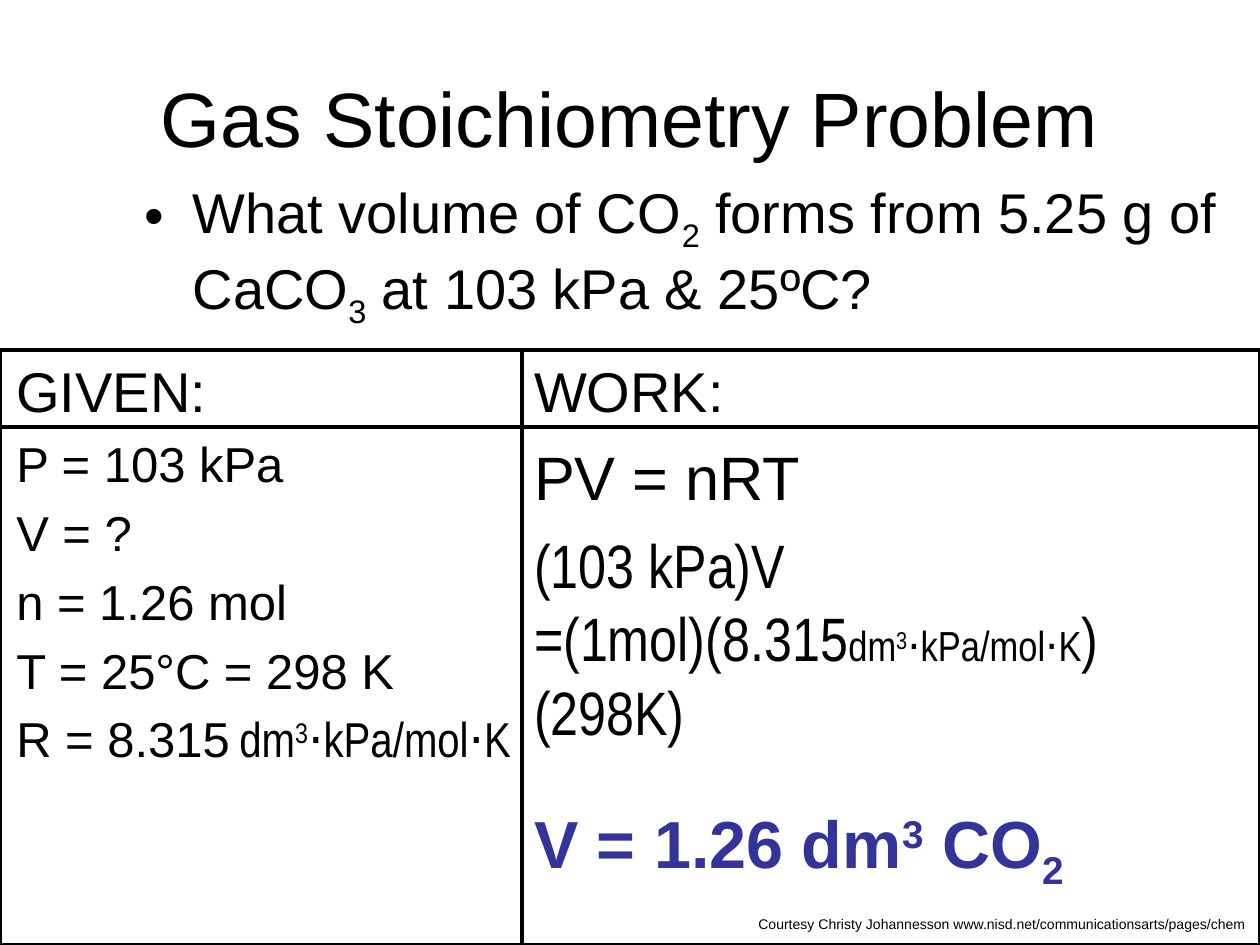
from dataclasses import dataclass

from lxml import etree
from pptx import Presentation
from pptx.dml.color import RGBColor
from pptx.enum.shapes import MSO_CONNECTOR, MSO_SHAPE
from pptx.enum.text import MSO_ANCHOR, PP_ALIGN
from pptx.oxml.ns import qn
from pptx.util import Inches, Pt

STRAIGHT = MSO_CONNECTOR.STRAIGHT
RECTANGLE = MSO_SHAPE.RECTANGLE
MIDDLE, TOP = MSO_ANCHOR.MIDDLE, MSO_ANCHOR.TOP
CENTER, LEFT = PP_ALIGN.CENTER, PP_ALIGN.LEFT
TITLE_ONLY = 5
SUBSCRIPT, SUPERSCRIPT = -25, 30


@dataclass(frozen=True)
class Theme:
    """Colours, fonts and type sizes of the slide."""
    ink: RGBColor = RGBColor(0, 0, 0)
    answer: RGBColor = RGBColor(0x33, 0x33, 0x99)
    font: str = "Arial"
    narrow: str = "Arial Narrow"
    title: int = 44
    heading: int = 32
    given: int = 28
    work: int = 35
    result: int = 38
    unit: int = 24
    credit: int = 8
    rule: float = 2.25


THEME = Theme()


@dataclass(frozen=True)
class Box:
    """A rectangle in inches."""
    left: float
    top: float
    width: float
    height: float

    def emu(self):
        """Return the four lengths as slide units."""
        return [Inches(value) for value in (self.left, self.top, self.width, self.height)]


PAGE = Box(0, 0, 10, 7.5)
TABLE_TOP = 2.78
SPLIT_X = 4.14
HEADER_Y = 3.39


def add_run(paragraph, text, size, font=THEME.font, color=THEME.ink, bold=False, baseline=0):
    """Append one formatted run to a paragraph."""
    run = paragraph.add_run()
    run.text = text
    run.font.size = Pt(size)
    run.font.name = font
    run.font.bold = bold
    run.font.color.rgb = color
    if baseline:
        run._r.get_or_add_rPr().set("baseline", str(baseline * 1000))


def add_cubic_decimetre_units(paragraph, size):
    """Append the units of the gas constant in the narrow font."""
    add_run(paragraph, "dm", size, THEME.narrow)
    add_run(paragraph, "3", size, THEME.narrow, baseline=SUPERSCRIPT)
    add_run(paragraph, "⋅kPa/mol⋅K", size, THEME.narrow)


def add_text_frame(slide, box, inset=0.1, wrap=True):
    """Place a text box and return its frame."""
    frame = slide.shapes.add_textbox(*box.emu()).text_frame
    frame.word_wrap = wrap
    frame.vertical_anchor = TOP
    frame.margin_left = Inches(inset)
    return frame


def next_paragraph(frame, space_before):
    """Append a left-aligned paragraph with space above it."""
    paragraph = frame.add_paragraph()
    paragraph.alignment = LEFT
    paragraph.space_before = Pt(space_before)
    return paragraph


def fill_title(slide, box):
    """Move the title placeholder into the box and write the title."""
    title = slide.shapes.title
    title.left, title.top, title.width, title.height = box.emu()
    title.text_frame.vertical_anchor = MIDDLE
    paragraph = title.text_frame.paragraphs[0]
    paragraph.alignment = CENTER
    add_run(paragraph, "Gas Stoichiometry Problem", THEME.title)


def add_question(slide, box):
    """Write the bulleted question."""
    paragraph = add_text_frame(slide, box).paragraphs[0]
    properties = paragraph._p.get_or_add_pPr()
    properties.set("marL", str(Inches(0.38)))
    properties.set("indent", str(-Inches(0.38)))
    etree.SubElement(properties, qn("a:buFont")).set("typeface", THEME.font)
    etree.SubElement(properties, qn("a:buChar")).set("char", "•")
    for text, baseline in (
        ("What volume of CO", 0), ("2", SUBSCRIPT),
        (" forms from 5.25 g of CaCO", 0), ("3", SUBSCRIPT),
        (" at 103 kPa & 25ºC?", 0),
    ):
        add_run(paragraph, text, THEME.heading, baseline=baseline)


def add_rule(slide, start, end):
    """Draw one straight rule of the frame."""
    ends = [Inches(value) for value in (*start, *end)]
    rule = slide.shapes.add_connector(STRAIGHT, *ends)
    rule.line.color.rgb = THEME.ink
    rule.line.width = Pt(THEME.rule)
    etree.SubElement(rule._element.spPr, qn("a:effectLst"))


def add_frame(slide, box):
    """Draw the outline with its column and header rules."""
    outline = slide.shapes.add_shape(RECTANGLE, *box.emu())
    outline.shadow.inherit = False
    outline.fill.background()
    outline.line.color.rgb = THEME.ink
    outline.line.width = Pt(THEME.rule)
    add_rule(slide, (SPLIT_X, box.top), (SPLIT_X, box.top + box.height))
    add_rule(slide, (box.left, HEADER_Y), (box.left + box.width, HEADER_Y))


def add_given(slide, box):
    """List the known quantities."""
    frame = add_text_frame(slide, box, inset=0.13)
    add_run(frame.paragraphs[0], "GIVEN:", THEME.heading)
    for text in ("P = 103 kPa", "V = ?", "n = 1.26 mol", "T = 25°C = 298 K", "R = 8.315"):
        paragraph = next_paragraph(frame, 5.7)
        add_run(paragraph, text, THEME.given)
    add_run(paragraph, " ", THEME.unit, THEME.narrow)
    add_cubic_decimetre_units(paragraph, THEME.given)


def add_work(slide, box):
    """Write the solution and its answer."""
    frame = add_text_frame(slide, box)
    add_run(frame.paragraphs[0], "WORK:", THEME.heading)
    add_run(next_paragraph(frame, 9), "PV = nRT", THEME.work)

    substitution = next_paragraph(frame, 8)
    add_run(substitution, "(103 kPa)V", THEME.work, THEME.narrow)
    substitution.add_line_break()
    add_run(substitution, "=(1mol)(8.315", THEME.work, THEME.narrow)
    add_cubic_decimetre_units(substitution, THEME.unit)
    add_run(substitution, ")(298K)", THEME.work, THEME.narrow)

    answer = next_paragraph(frame, 31)
    for text, baseline in (
        ("V = 1.26 dm", 0), ("3", SUPERSCRIPT), (" CO", 0), ("2", SUBSCRIPT),
    ):
        add_run(answer, text, THEME.result, color=THEME.answer, bold=True, baseline=baseline)


def add_credit(slide, box):
    """Write the source line."""
    paragraph = add_text_frame(slide, box, wrap=False).paragraphs[0]
    add_run(paragraph,
            "Courtesy Christy Johannesson www.nisd.net/communicationsarts/pages/chem",
            THEME.credit)


def main():
    """Build and save the slide."""
    presentation = Presentation()
    presentation.slide_width = Inches(PAGE.width)
    presentation.slide_height = Inches(PAGE.height)
    slide = presentation.slides.add_slide(presentation.slide_layouts[TITLE_ONLY])
    column_height = 3.86
    add_frame(slide, Box(0, TABLE_TOP, PAGE.width, PAGE.height - TABLE_TOP))
    add_work(slide, Box(SPLIT_X, TABLE_TOP, PAGE.width - SPLIT_X, column_height))
    fill_title(slide, Box(0.5, 0.3, PAGE.width - 1, 1.25))
    add_question(slide, Box(1.05, 1.36, PAGE.width - 1.05, 1.56))
    add_given(slide, Box(0, TABLE_TOP, SPLIT_X + 0.03, column_height))
    add_credit(slide, Box(5.92, 7.22, PAGE.width - 5.92, 0.37))
    presentation.save("out.pptx")


if __name__ == "__main__":
    main()
